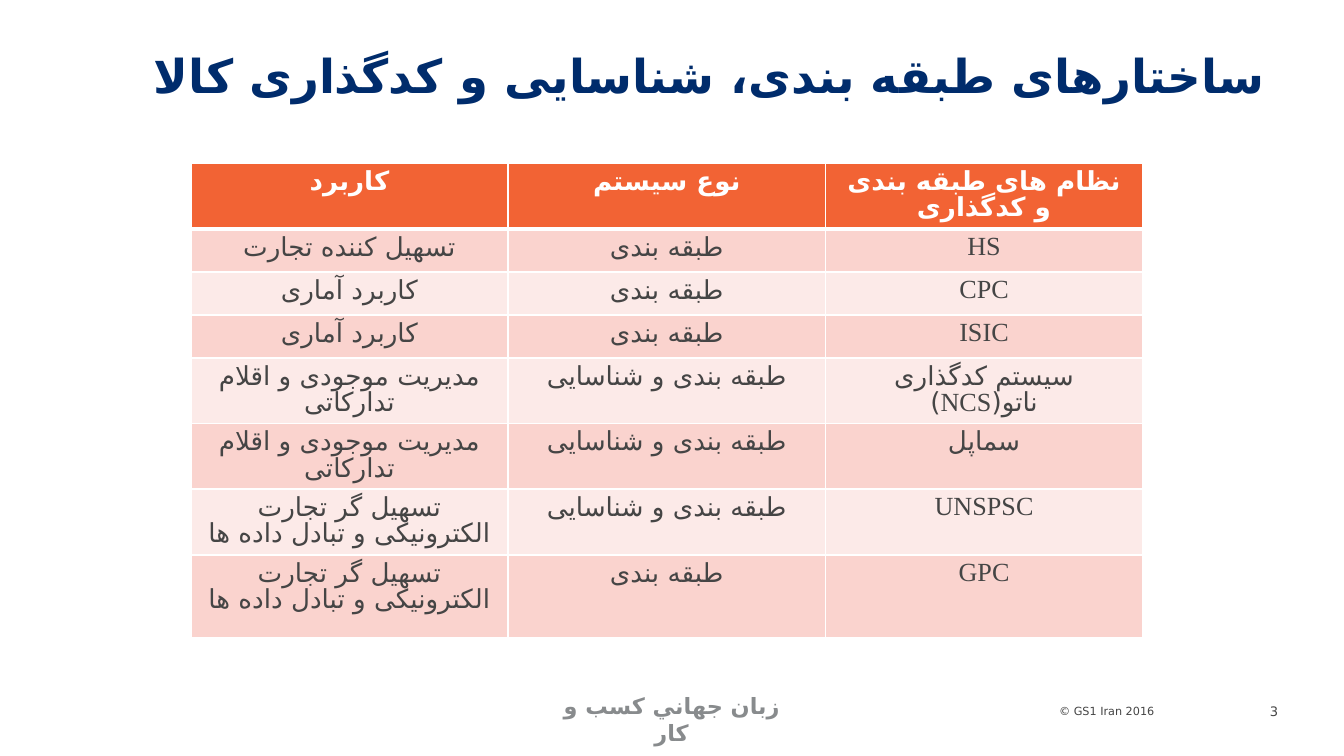
from pptx import Presentation
from pptx.util import Pt
from pptx.dml.color import RGBColor
from pptx.enum.shapes import MSO_SHAPE
from pptx.enum.text import MSO_ANCHOR, MSO_AUTO_SIZE, PP_ALIGN
from pptx.oxml.ns import qn
from lxml.etree import SubElement

HUES = {
    "white": "FFFFFF", "navy": "002C6C", "text": "454545",
    "grey": "888B8D", "head": "F26334", "dark": "FAD3CE", "light": "FCEAE8",
}
SANS, SERIF = "DejaVu Sans", "Times New Roman"
SORT = "طبقه بندی"
BOTH = "طبقه بندی و شناسایی"
STATS = "کاربرد آماری"
STOCK = "مدیریت موجودی و اقلام تدارکاتی"
TRADE = "تسهیل گر تجارت الکترونیکی و تبادل داده ها "
ROWS = [
    ("کاربرد", "نوع سیستم", "نظام های طبقه بندی و کدگذاری"),
    ("تسهیل کننده تجارت", SORT, "HS"),
    (STATS, SORT, "CPC"),
    (STATS, SORT, "ISIC"),
    (STOCK, BOTH, "سیستم کدگذاری ناتو(NCS)"),
    (STOCK, BOTH, "سماپل"),
    (TRADE, BOTH, "UNSPSC"),
    (TRADE, SORT, "GPC"),
]
HIGH = [32, 23, 23, 23, 32, 32, 32, 44.5]


def hue(name):
    return RGBColor.from_string(HUES[name])


def write(frame, text, size, color, align, bold=False, face=SANS, rtl=False):
    para = frame.paragraphs[0]
    para.alignment = align
    if rtl:
        para._p.get_or_add_pPr().set("rtl", "1")
    run = para.add_run()
    run.text = text
    font = run.font
    font.size, font.bold, font.name = Pt(size), bold, face
    font.color.rgb = hue(color)
    SubElement(run._r.get_or_add_rPr(), qn("a:cs"), typeface=SANS)
    return para


def inset(frame, left, top, right, bottom):
    frame.margin_left, frame.margin_top = Pt(left), Pt(top)
    frame.margin_right, frame.margin_bottom = Pt(right), Pt(bottom)


def edge(cell, low):
    props = cell._tc.get_or_add_tcPr()
    for side, width in (("L", 1), ("R", 1), ("T", 1), ("B", low)):
        line = SubElement(props, qn("a:ln" + side), w=str(Pt(width)))
        fill = SubElement(line, qn("a:solidFill"))
        SubElement(fill, qn("a:srgbClr"), val=HUES["white"])


def add_title(slide, left, top, width, height):
    title = slide.shapes.title
    title.left, title.top = Pt(left), Pt(top)
    title.width, title.height = Pt(width), Pt(height)
    frame = title.text_frame
    frame.auto_size, frame.word_wrap = MSO_AUTO_SIZE.NONE, True
    frame.vertical_anchor = MSO_ANCHOR.MIDDLE
    inset(frame, 0, 3.6, 7.2, 3.6)
    write(frame, "ساختارهای طبقه بندی، شناسایی و کدگذاری کالا", 25, "navy",
          PP_ALIGN.RIGHT, True, rtl=True)


def add_grid(slide, left, top, width):
    count = len(ROWS[0])
    table = slide.shapes.add_table(
        len(ROWS), count, Pt(left), Pt(top), Pt(width), Pt(sum(HIGH))).table
    for col in table.columns:
        col.width = Pt(width / count)
    for i, (texts, high) in enumerate(zip(ROWS, HIGH)):
        table.rows[i].height = Pt(high)
        head = i == 0
        fill = "head" if head else ("light", "dark")[i % 2]
        for j, text in enumerate(texts):
            cell = table.cell(i, j)
            edge(cell, 3 if head or i == 0 else 1)
            if i == 1:
                cell._tc.tcPr.find(qn("a:lnT")).set("w", str(Pt(3)))
            cell.fill.solid()
            cell.fill.fore_color.rgb = hue(fill)
            face = SERIF if j == 2 and not head else SANS
            para = write(cell.text_frame, text, 14, "white" if head else "text",
                         PP_ALIGN.CENTER, head, face, "(" in text)
            para.line_spacing = 0.85


def add_note(slide, text, size, left, top, width, height):
    box = slide.shapes.add_textbox(Pt(left), Pt(top), Pt(width), Pt(height))
    frame = box.text_frame
    frame.word_wrap = True
    frame.vertical_anchor = MSO_ANCHOR.MIDDLE
    inset(frame, 0, 0, 0, 0)
    write(frame, text, size, "text", PP_ALIGN.RIGHT)


def add_foot(slide, left, top, width):
    box = slide.shapes.add_shape(
        MSO_SHAPE.RECTANGLE, Pt(left), Pt(top), Pt(132), Pt(21.6))
    box.shadow.inherit = False
    box.fill.solid()
    box.fill.fore_color.rgb = hue("white")
    box.line.fill.background()
    frame = box.text_frame
    frame.word_wrap = True
    frame.vertical_anchor = MSO_ANCHOR.TOP
    frame.auto_size = MSO_AUTO_SIZE.SHAPE_TO_FIT_TEXT
    write(frame, "زبان جهاني کسب و کار", 12, "grey", PP_ALIGN.CENTER, True)
    right = left + width
    add_note(slide, "© GS1 Iran 2016", 6, right - 284.4, top + 10, 218, 8)
    add_note(slide, "3", 7, right - 19.5, top + 8, 19.5, 11.5)


def main():
    deck = Presentation()
    deck.slide_width, deck.slide_height = Pt(720), Pt(405)
    slide = deck.slides.add_slide(deck.slide_layouts[5])
    add_title(slide, 35.3, 13.7, 649.4, 53.3)
    add_grid(slide, 102.2, 87.5, 510)
    add_foot(slide, 293.8, 367.2, 390.9)
    deck.save("out.pptx")


if __name__ == "__main__":
    main()
